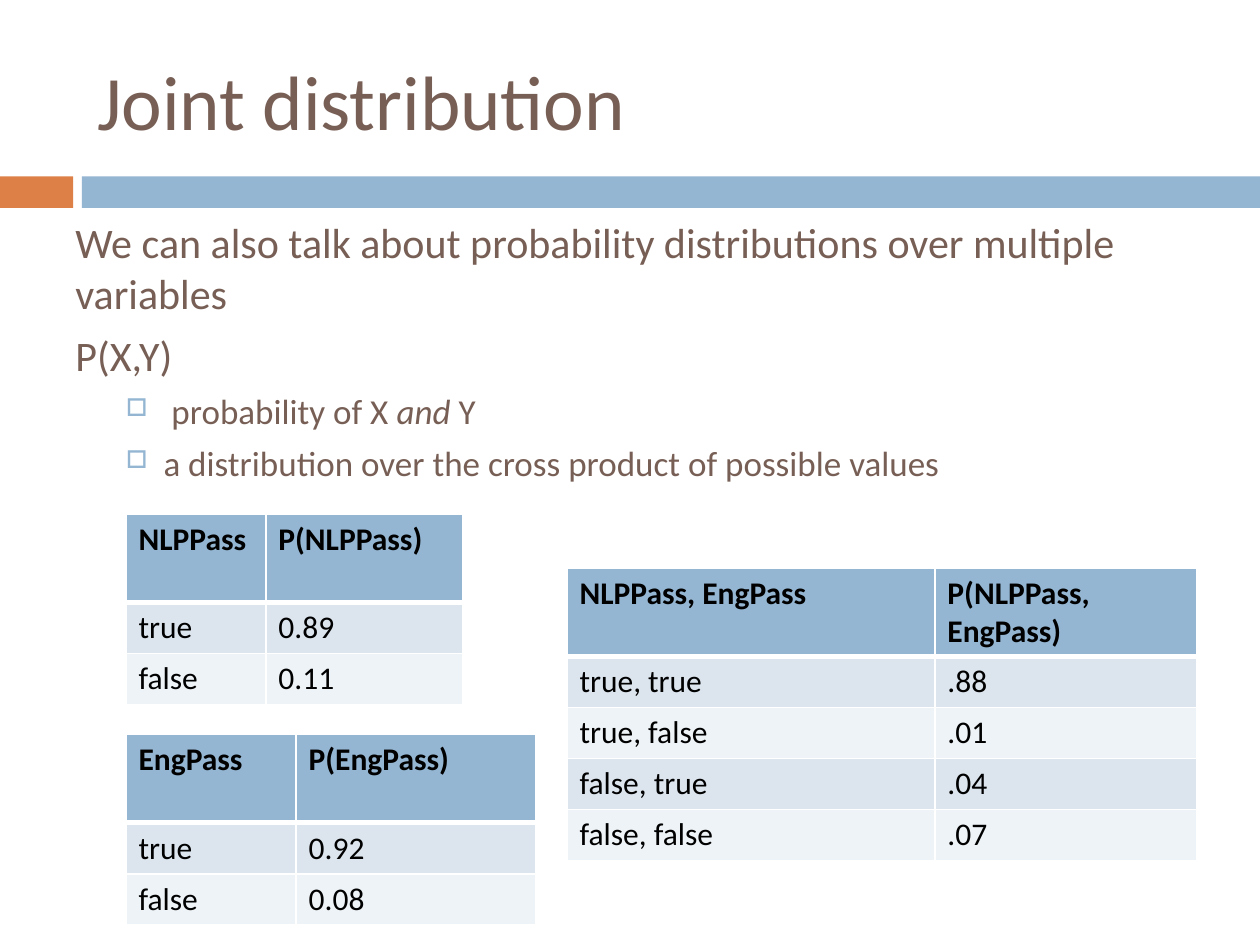
from dataclasses import dataclass

from lxml import etree
from pptx import Presentation
from pptx import util as u
from pptx.dml.color import RGBColor
from pptx.enum import shapes, text
from pptx.oxml.ns import qn

ORANGE = RGBColor(0xDD, 0x80, 0x47)
BLUE = RGBColor(0x94, 0xB6, 0xD2)
BROWN = RGBColor(0x77, 0x5F, 0x55)
BLACK = RGBColor(0, 0, 0)
WHITE = RGBColor(0xFF, 0xFF, 0xFF)
BANDS = RGBColor(0xDC, 0xE5, 0xEE), RGBColor(0xEE, 0xF3, 0xF7)
FONT = "Calibri"

WIDTH, HEIGHT = u.Inches(10), u.Inches(7.5)
COL, ROW = WIDTH / 10, HEIGHT / 7.5
HEAD_ROW, BODY_ROW = 0.7, 0.405


@dataclass
class Box:
    x: float
    y: float
    w: float
    h: float

    def emu(self) -> tuple:
        return tuple(u.Emu(round(v)) for v in
                     (self.x * COL, self.y * ROW, self.w * COL, self.h * ROW))


@dataclass
class Distribution:
    x: float
    y: float
    cols: tuple
    rows: list


@dataclass
class Para:
    runs: list
    size: float = 24
    before: float = 7
    bullet: bool = False


BARS = [(Box(0, 1.4, 0.58, 0.25), ORANGE), (Box(0.65, 1.4, 9.35, 0.25), BLUE)]

BODY = [
    Para(["We can also talk about probability distributions over multiple variables"]),
    Para(["P(X,Y)"]),
    Para([" probability of X ", ("and", True), " Y"], 20, 5.5, True),
    Para(["a distribution over the cross product of possible values"], 20, 5.5, True),
]

TABLES = [
    Distribution(1, 4.08, (1.11, 1.56), [
        ("NLPPass", "P(NLPPass)"), ("true", "0.89"), ("false", "0.11")]),
    Distribution(1, 5.83, (1.35, 1.9), [
        ("EngPass", "P(EngPass)"), ("true", "0.92"), ("false", "0.08")]),
    Distribution(4.5, 4.51, (2.92, 2.08), [
        ("NLPPass, EngPass", "P(NLPPass, EngPass)"),
        ("true, true", ".88"), ("true, false", ".01"),
        ("false, true", ".04"), ("false, false", ".07")]),
]


def add_text(p, content: str, size: float = 18, color: RGBColor = BROWN,
             bold: bool = False, italic: bool = False) -> None:
    r = p.add_run()
    r.text = content
    f = r.font
    f.name, f.size, f.bold, f.italic = FONT, u.Pt(size), bold, italic
    f.color.rgb = color


def add_bar(s, box: Box, color: RGBColor) -> None:
    sp = s.shapes.add_shape(shapes.MSO_SHAPE.RECTANGLE, *box.emu())
    sp.shadow.inherit = False
    sp.fill.solid()
    sp.fill.fore_color.rgb = color
    sp.line.fill.background()


def set_title(s, box: Box, content: str) -> None:
    sp = s.shapes.title
    sp.left, sp.top, sp.width, sp.height = box.emu()
    tf = sp.text_frame
    tf.vertical_anchor = text.MSO_ANCHOR.MIDDLE
    p = tf.paragraphs[0]
    p.alignment = text.PP_ALIGN.LEFT
    add_text(p, content, size=44)


def set_bullet(p) -> None:
    pPr = p._p.get_or_add_pPr()
    pPr.set("marL", str(u.Inches(0.7)))
    pPr.set("indent", str(u.Inches(-0.3)))
    clr = etree.SubElement(pPr, qn("a:buClr"))
    etree.SubElement(clr, qn("a:srgbClr"), val=str(BLUE))
    etree.SubElement(pPr, qn("a:buSzPct"), val="70000")
    etree.SubElement(pPr, qn("a:buChar"), char="□")


def add_body(s, box: Box, paras: list) -> None:
    tf = s.shapes.add_textbox(*box.emu()).text_frame
    tf.word_wrap = True
    for i, para in enumerate(paras):
        p = tf.add_paragraph() if i else tf.paragraphs[0]
        p.space_before = u.Pt(para.before)
        if para.bullet:
            set_bullet(p)
        for run in para.runs:
            content, italic = (run, False) if isinstance(run, str) else run
            add_text(p, content, size=para.size, italic=italic)


def set_borders(cell, top: float, bottom: float) -> None:
    tcPr = cell._tc.get_or_add_tcPr()
    for side, width in (("L", 1), ("R", 1), ("T", top), ("B", bottom)):
        ln = etree.SubElement(tcPr, qn(f"a:ln{side}"), w=str(u.Pt(width)))
        fill = etree.SubElement(ln, qn("a:solidFill"))
        etree.SubElement(fill, qn("a:srgbClr"), val=str(WHITE))


def add_distribution(s, d: Distribution) -> None:
    heights = [HEAD_ROW] + [BODY_ROW] * (len(d.rows) - 1)
    box = Box(d.x, d.y, sum(d.cols), sum(heights))
    table = s.shapes.add_table(len(d.rows), len(d.cols), *box.emu()).table
    for column, width in zip(table.columns, d.cols):
        column.width = u.Emu(round(width * COL))
    for i, (height, values) in enumerate(zip(heights, d.rows)):
        table.rows[i].height = u.Emu(round(height * ROW))
        for j, value in enumerate(values):
            cell = table.cell(i, j)
            set_borders(cell, top=3 if i == 1 else 1, bottom=3 if i == 0 else 1)
            cell.fill.solid()
            cell.fill.fore_color.rgb = BANDS[(i - 1) % 2] if i else BLUE
            add_text(cell.text_frame.paragraphs[0], value, color=BLACK, bold=i == 0)


def main() -> None:
    prs = Presentation()
    prs.slide_width, prs.slide_height = WIDTH, HEIGHT
    s = prs.slides.add_slide(prs.slide_layouts[5])
    for box, color in BARS:
        add_bar(s, box, color)
    set_title(s, Box(0.67, 0.25, 8.92, 1.08), "Joint distribution")
    add_body(s, Box(0.5, 1.67, 9, 3.08), BODY)
    for d in TABLES:
        add_distribution(s, d)
    prs.save("out.pptx")


if __name__ == "__main__":
    main()
